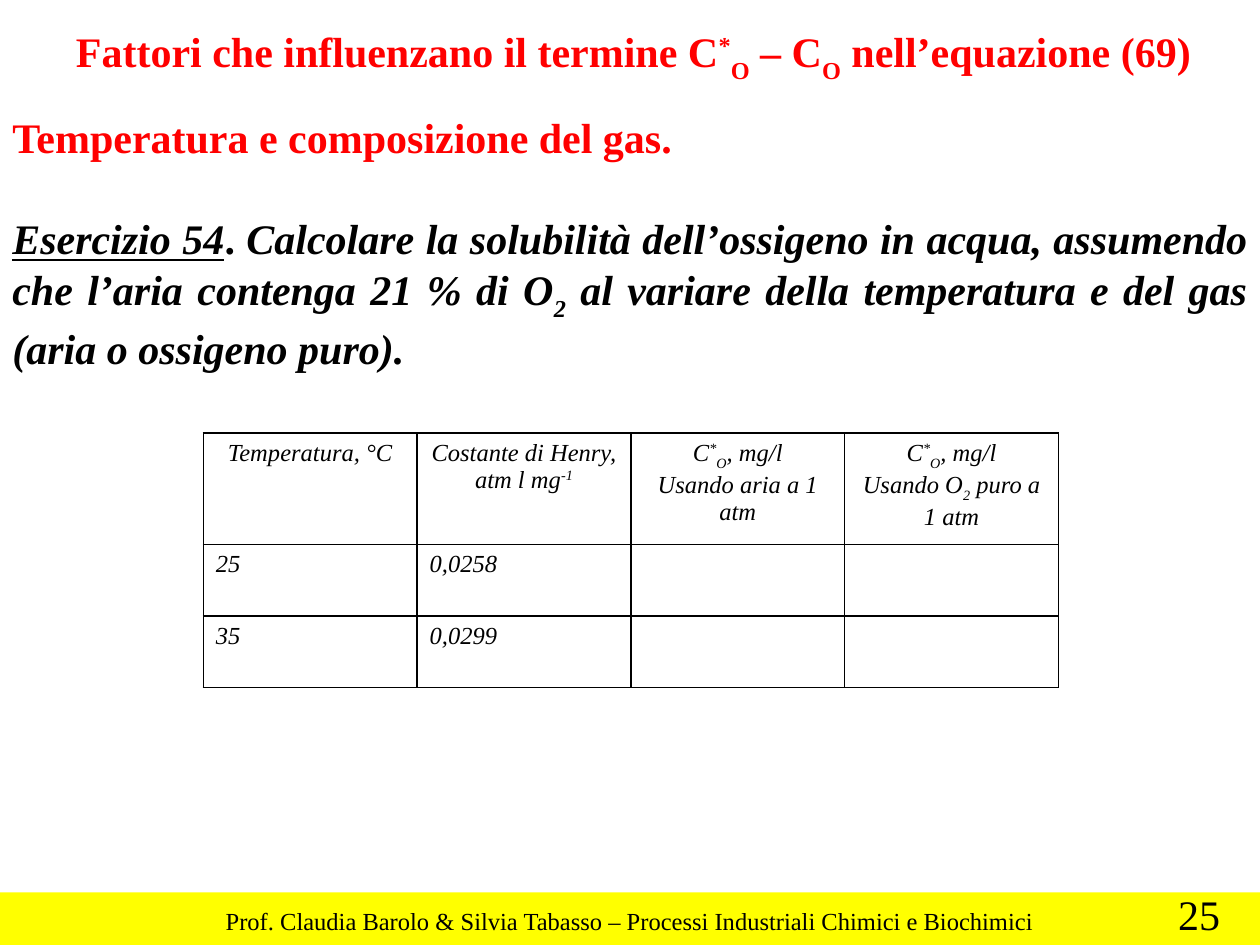
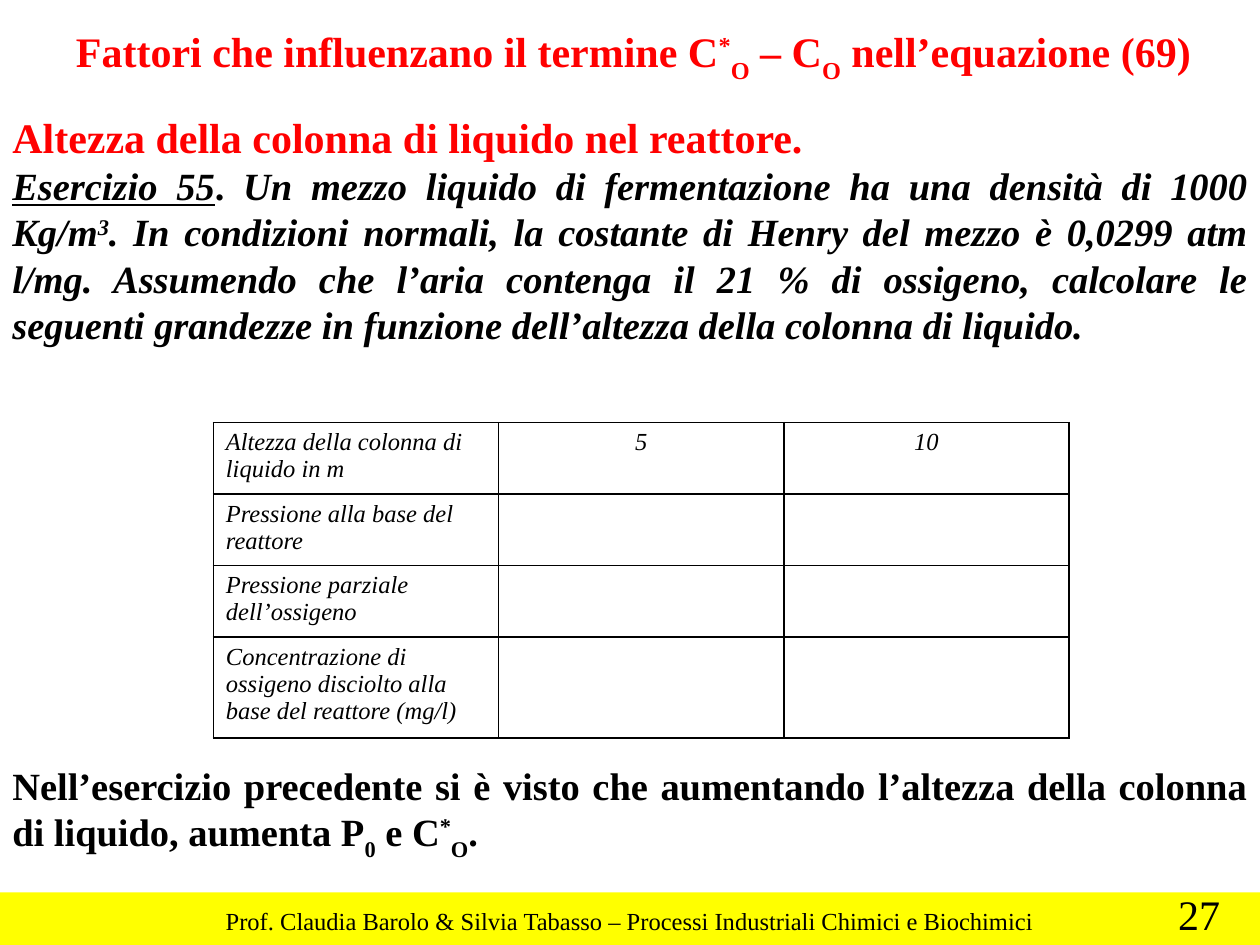
"""Build two exercise slides on oxygen solubility in fermentation reactors."""
from dataclasses import dataclass

import lxml.etree
import pptx
import pptx.dml.color
import pptx.enum.shapes
import pptx.enum.text
import pptx.oxml.ns
import pptx.presentation
import pptx.slide
import pptx.table
import pptx.text.text
import pptx.util

Cm = pptx.util.Cm
Pt = pptx.util.Pt
RGBColor = pptx.dml.color.RGBColor
ALIGN = pptx.enum.text.PP_ALIGN
Paragraph = pptx.text.text._Paragraph

RED = RGBColor(0xFF, 0x00, 0x00)
BLACK = RGBColor(0x00, 0x00, 0x00)
YELLOW = RGBColor(0xFF, 0xFF, 0x00)
FONT = "Times New Roman"
SMALL, LARGE = 14, 24
SCRIPTS = {"^": "30000", "_": "-30000"}
TITLE = "Fattori che influenzano il termine C~^*~_O~ – C~_O~ nell’equazione (69)"
FOOTER = "Prof. Claudia Barolo & Silvia Tabasso – Processi Industriali Chimici e Biochimici"


@dataclass(frozen=True)
class Area:
    """Place of a box, in centimetres."""

    left: float
    top: float
    width: float
    height: float

    def lengths(self) -> list[pptx.util.Length]:
        """Return the four lengths that a shape call expects."""
        return [Cm(value) for value in (self.left, self.top, self.width, self.height)]


@dataclass(frozen=True)
class Grid:
    """Table with equal columns; its cells hold lines of marked text."""

    left: float
    top: float
    column_width: float
    row_heights: tuple[float, ...]
    rows: tuple[tuple[str, ...], ...]
    centred_from: int


@dataclass(frozen=True)
class Exercise:
    """Content of one slide."""

    number: str
    topic: str
    label: str
    question: str
    size: int
    gap: float
    body_height: float
    grid: Grid
    closing: str = ""
    closing_gap: float = 0


BAND = Area(0, 17.99, 25.4, 1.06)
FOOTER_AREA = Area(4.3, 18.13, 17.04, 0.86)
NUMBER_AREA = Area(23.5, 17.78, 1.35, 1.27)
TITLE_AREA = Area(1.2, 0.38, 23.14, 1.27)

EXERCISES = (
    Exercise(
        number="25",
        topic="Temperatura e composizione del gas. ",
        label="Esercizio 54",
        question="Calcolare la solubilità dell’ossigeno in acqua, assumendo che l’aria "
        "contenga 21 % di O~_2~ al variare della temperatura e del gas (aria o ossigeno puro).",
        size=24,
        gap=29,
        body_height=5.33,
        grid=Grid(
            4.1, 8.73, 4.31, (2.24, 1.44, 1.44),
            (
                ("Temperatura, °C", "Costante di Henry, atm l mg~^-1",
                 "C~^*~_O~, mg/l\nUsando aria a 1 atm",
                 "C~^*~_O~, mg/l\nUsando O~_2~ puro a 1 atm"),
                ("25", "0,0258", "", ""),
                ("35", "0,0299", "", ""),
            ),
            centred_from=0,
        ),
    ),
    Exercise(
        number="27",
        topic="Altezza della colonna di liquido nel reattore. ",
        label="Esercizio 55",
        question="Un mezzo liquido di fermentazione ha una densità di 1000 Kg/m~^3~. "
        "In condizioni normali, la costante di Henry del mezzo è 0,0299 atm l/mg. "
        "Assumendo che l’aria contenga il 21 % di ossigeno, calcolare le seguenti "
        "grandezze in funzione dell’altezza della colonna di liquido.",
        size=22,
        gap=0,
        body_height=15.21,
        grid=Grid(
            4.3, 8.52, 5.75, (1.44, 1.44, 1.44, 2.02),
            (
                ("Altezza della colonna di liquido in m", "5", "10"),
                ("Pressione alla base del reattore", "", ""),
                ("Pressione parziale dell’ossigeno", "", ""),
                ("Concentrazione di ossigeno disciolto alla base del reattore (mg/l)", "", ""),
            ),
            centred_from=1,
        ),
        closing="Nell’esercizio precedente si è visto che aumentando l’altezza della "
        "colonna di liquido, aumenta P~_0~ e C~^*~_O~. ",
        closing_gap=237,
    ),
)


def write(para: Paragraph, text: str, *, size: float = LARGE, color: RGBColor = BLACK,
          bold: bool = False, italic: bool = False, underline: bool = False) -> None:
    """Add text to a paragraph; ~ parts spans, ^ raises one and _ lowers one."""
    for piece in filter(None, text.split("~")):
        shift = SCRIPTS.get(piece[0])
        span = para.add_run()
        span.text = piece[1:] if shift else piece
        font = span.font
        font.name, font.size, font.color.rgb = FONT, Pt(size), color
        font.bold, font.italic, font.underline = bold, italic, underline
        if shift:
            font._element.set("baseline", shift)


def add_box(page: pptx.slide.Slide, area: Area, wrap: bool = False) -> pptx.text.text.TextFrame:
    """Add a text box and return its frame."""
    frame = page.shapes.add_textbox(*area.lengths()).text_frame
    frame.word_wrap = wrap
    frame.auto_size = pptx.enum.text.MSO_AUTO_SIZE.SHAPE_TO_FIT_TEXT
    return frame


def add_body_para(frame: pptx.text.text.TextFrame, first: bool = False, gap: float = 0) -> Paragraph:
    """Return a justified body paragraph with the given space before it."""
    para = frame.paragraphs[0] if first else frame.add_paragraph()
    para.alignment = ALIGN.JUSTIFY
    para.space_before = Pt(gap)
    return para


def add_frame(page: pptx.slide.Slide, number: str) -> None:
    """Draw the band, footer and page number."""
    band = page.shapes.add_shape(pptx.enum.shapes.MSO_SHAPE.RECTANGLE, *BAND.lengths())
    band.shadow.inherit = False
    band.fill.solid()
    band.fill.fore_color.rgb = YELLOW
    band.line.fill.background()
    write(add_box(page, FOOTER_AREA).paragraphs[0], FOOTER, size=SMALL)
    write(add_box(page, NUMBER_AREA).paragraphs[0], number)


def add_title(page: pptx.slide.Slide) -> None:
    """Write the shared title."""
    para = add_box(page, TITLE_AREA).paragraphs[0]
    para.alignment = ALIGN.CENTER
    write(para, TITLE, color=RED, bold=True)


def add_body(page: pptx.slide.Slide, exercise: Exercise) -> None:
    """Write the topic, the question and the closing remark."""
    frame = add_box(page, Area(0, 2.13, 25.4, exercise.body_height), wrap=True)
    write(add_body_para(frame, first=True), exercise.topic, color=RED, bold=True)
    para = add_body_para(frame, gap=exercise.gap)
    write(para, exercise.label, size=exercise.size, bold=True, italic=True, underline=True)
    write(para, ". ", size=exercise.size, bold=True)
    write(para, exercise.question, size=exercise.size, bold=True, italic=True)
    if exercise.closing:
        para = add_body_para(frame, gap=exercise.closing_gap)
        write(para, exercise.closing, size=exercise.size, bold=True)


def border_cell(cell: pptx.table._Cell) -> None:
    """Give a cell four thin black borders and no fill."""
    properties = cell._tc.get_or_add_tcPr()
    qn = pptx.oxml.ns.qn
    for side in ("lnL", "lnR", "lnT", "lnB"):
        line = lxml.etree.SubElement(properties, qn(f"a:{side}"), w=str(Pt(1)))
        fill = lxml.etree.SubElement(line, qn("a:solidFill"))
        lxml.etree.SubElement(fill, qn("a:srgbClr"), val=str(BLACK))
    cell.fill.background()


def add_grid(page: pptx.slide.Slide, grid: Grid) -> None:
    """Draw the exercise table."""
    count = len(grid.rows[0])
    area = Area(grid.left, grid.top, count * grid.column_width, sum(grid.row_heights))
    table = page.shapes.add_table(len(grid.rows), count, *area.lengths()).table
    table.first_row = table.horz_banding = False
    for column in table.columns:
        column.width = Cm(grid.column_width)
    for row_index, texts in enumerate(grid.rows):
        table.rows[row_index].height = Cm(grid.row_heights[row_index])
        for column_index, text in enumerate(texts):
            cell = table.cell(row_index, column_index)
            border_cell(cell)
            centred = row_index == 0 and column_index >= grid.centred_from
            for line_index, line in enumerate(text.split("\n")):
                frame = cell.text_frame
                para = frame.add_paragraph() if line_index else frame.paragraphs[0]
                para.alignment = ALIGN.CENTER if centred else ALIGN.LEFT
                write(para, line, size=SMALL, italic=True)


def add_exercise(deck: pptx.presentation.Presentation, exercise: Exercise) -> None:
    """Add one exercise slide."""
    page = deck.slides.add_slide(deck.slide_layouts[6])
    add_frame(page, exercise.number)
    add_body(page, exercise)
    add_title(page)
    add_grid(page, exercise.grid)


def main() -> None:
    """Build and save the deck."""
    deck = pptx.Presentation()
    deck.slide_width, deck.slide_height = Cm(25.4), Cm(19.05)
    for exercise in EXERCISES:
        add_exercise(deck, exercise)
    deck.save("out.pptx")


if __name__ == "__main__":
    main()
